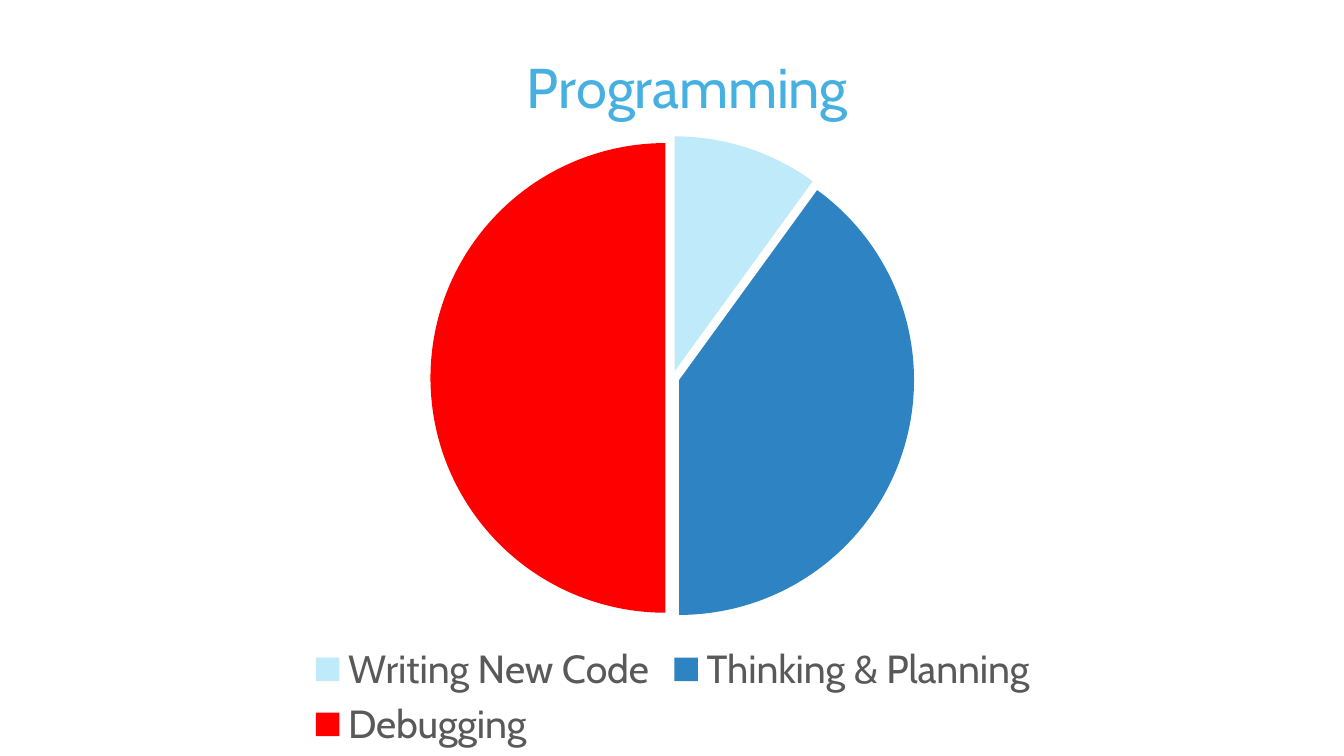
from lxml.etree import SubElement
from pptx import Presentation
from pptx.chart.data import CategoryChartData
from pptx.dml.color import RGBColor
from pptx.enum.chart import XL_CHART_TYPE, XL_LEGEND_POSITION
from pptx.oxml.ns import qn
from pptx.util import Inches, Pt

THEME = {
    "face": "Cabin",
    "title": {"size": 40, "color": "46B1E1"},
    "legend": {"size": 28, "color": "595959"},
    "slices": ["BFEAF9", "2E83C3", "FF0000"],
}


def style(font, look):
    form = {"name": THEME["face"], "size": Pt(look["size"]), "bold": False}
    for key, val in form.items():
        setattr(font, key, val)
    font.color.rgb = RGBColor.from_string(look["color"])


def place(node, spot):
    """Set a manual layout, in fractions of the chart."""
    for old in node.findall(qn("c:layout")):
        node.remove(old)
    box = SubElement(node, qn("c:layout"))
    man = SubElement(box, qn("c:manualLayout"))
    for tag, val in spot.items():
        SubElement(man, qn("c:" + tag)).set("val", str(val))
    return box


deck = Presentation()
deck.slide_width, deck.slide_height = Inches(13.33), Inches(7.5)
slide = deck.slides.add_slide(deck.slide_layouts[6])

# Pie chart
data = CategoryChartData()
data.categories = ["Writing New Code", "Thinking & Planning", "Debugging"]
data.add_series("Series 1", [10, 40, 50])
chart = slide.shapes.add_chart(
    XL_CHART_TYPE.PIE_EXPLODED, Inches(1.15), Inches(0),
    Inches(11.04), Inches(7.5), data).chart
chart.font.name = THEME["face"]
chart.font.size = Pt(10)

# Slices, pulled slightly apart
plot = chart.plots[0]
plot.vary_by_categories = True
pie = plot.series[0]
for node in pie._element.iter(qn("c:explosion")):
    node.set("val", "3")
for num, hue in enumerate(THEME["slices"]):
    form = pie.points[num].format
    form.fill.solid()
    form.fill.fore_color.rgb = RGBColor.from_string(hue)
    form.line.fill.background()

# Plot area
area = chart._chartSpace.chart.plotArea
area.insert(0, place(area, {
    "layoutTarget": "inner", "xMode": "edge", "yMode": "edge",
    "x": 0.28, "y": 0.18, "w": 0.44, "h": 0.64}))

# Title
chart.has_title = True
title = chart.chart_title
title.text_frame.text = "Programming"
style(title.text_frame.paragraphs[0].runs[0].font, THEME["title"])
title.include_in_layout = False
head = title._element
head.find(qn("c:tx")).addnext(place(head, {
    "xMode": "edge", "yMode": "edge", "x": 0.36, "y": 0.05}))

# Legend
chart.has_legend = True
chart.legend.position = XL_LEGEND_POSITION.BOTTOM
chart.legend.include_in_layout = False
style(chart.legend.font, THEME["legend"])

deck.save("out.pptx")
